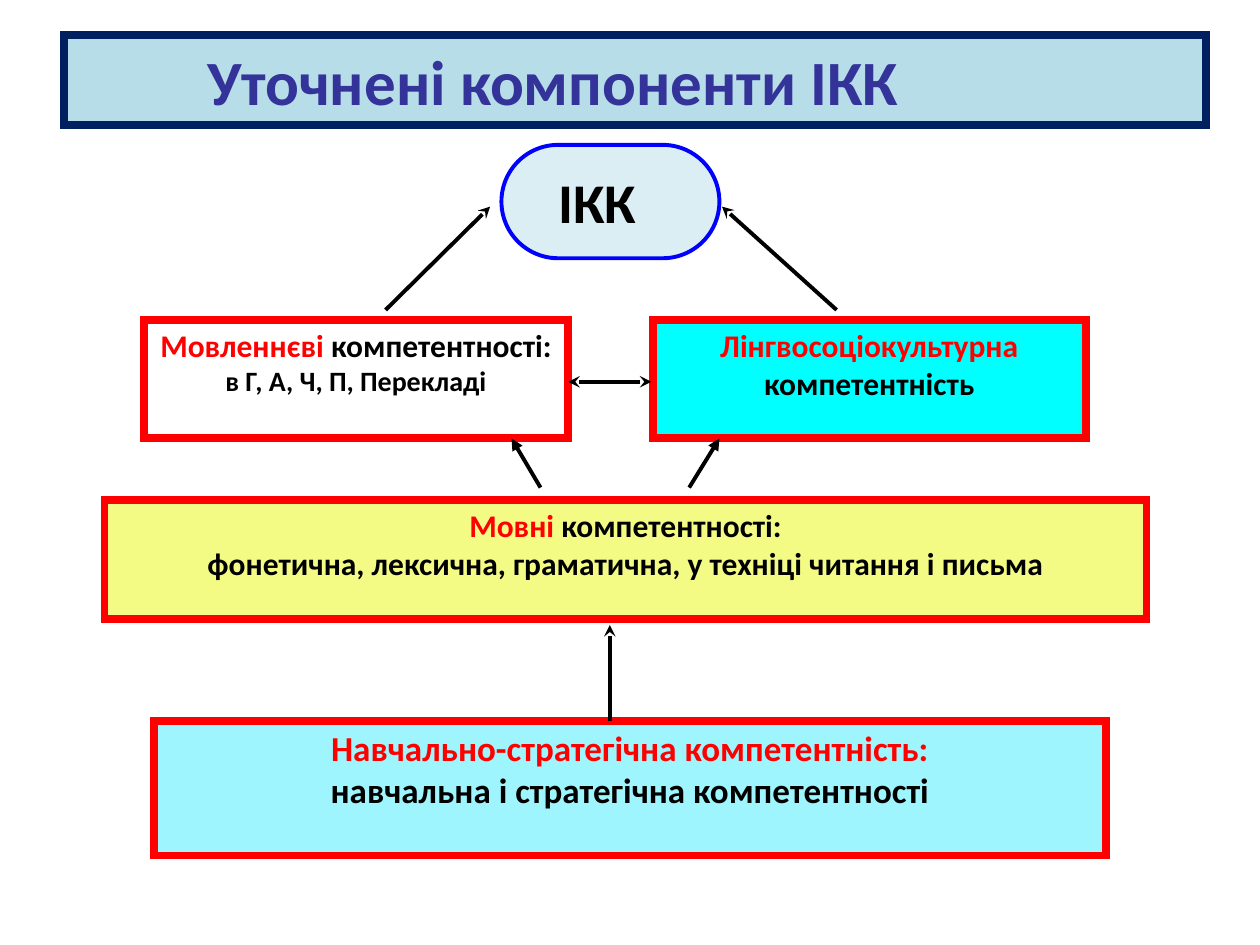
"""Build a slide with the refined components of ІКК as a diagram."""
from pptx import Presentation
from pptx.dml.color import RGBColor
from pptx.enum.shapes import MSO_CONNECTOR, MSO_SHAPE
from pptx.enum.text import MSO_ANCHOR, MSO_AUTO_SIZE, PP_ALIGN
from pptx.oxml.ns import qn
from pptx.util import Inches, Pt
from lxml.etree import SubElement

COLORS = {
    "title_fill": "B7DEE8", "title_line": "002060", "title_text": "333399",
    "goal_fill": "DBEEF4", "blue": "0000FF", "red": "FF0000",
    "black": "000000", "white": "FFFFFF", "cyan": "00FFFF",
    "yellow": "F3FB85", "pale_cyan": "9EF5FE",
}


def style_box(s, fill, line, width):
    s.fill.solid()
    s.fill.fore_color.rgb = RGBColor.from_string(COLORS[fill])
    s.line.color.rgb = RGBColor.from_string(COLORS[line])
    s.line.width = Pt(width)
    SubElement(s.line._get_or_add_ln(), qn("a:miter"), lim="800000")


def add_run(p, text, size, color):
    r = p.add_run()
    r.text = text
    r.font.name = "Calibri"
    r.font.size = Pt(size)
    r.font.bold = True
    r.font.color.rgb = RGBColor.from_string(COLORS[color])


prs = Presentation()
prs.slide_width, prs.slide_height = Inches(10), Inches(7.5)
slide = prs.slides.add_slide(prs.slide_layouts[5])

title = slide.shapes.title
title.left, title.top = Inches(0.51), Inches(0.28)
title.width, title.height = Inches(9.06), Inches(0.71)
style_box(title, "title_fill", "title_line", 4.5)
tf = title.text_frame
tf.auto_size = MSO_AUTO_SIZE.NONE
tf.vertical_anchor = MSO_ANCHOR.MIDDLE
tf.margin_left = Inches(1.14)
p = tf.paragraphs[0]
p.alignment = PP_ALIGN.LEFT
add_run(p, "Уточнені компоненти ІКК", 36, "title_text")

goal = slide.shapes.add_shape(
    MSO_SHAPE.ROUNDED_RECTANGLE, Inches(3.98), Inches(1.15), Inches(1.73), Inches(0.9))
goal.adjustments[0] = 0.5
goal.shadow.inherit = False
style_box(goal, "goal_fill", "blue", 2.25)
tf = goal.text_frame
tf.vertical_anchor = MSO_ANCHOR.TOP
tf.margin_left = Inches(0.32)
p = tf.paragraphs[0]
p.alignment = PP_ALIGN.LEFT
add_run(p, "ІКК", 32, "black")

boxes = [
    (1.14, 2.54, 3.37, 0.94, "white",
     [[("Мовленнєві", 18, "red"), (" компетентності:", 18, "black")],
      [("в Г, А, Ч, П, Перекладі", 16, "black")]]),
    (5.18, 2.54, 3.44, 0.94, "cyan",
     [[("Лінгвосоціокультурна", 18, "red"), (" компетентність", 18, "black")]]),
    (0.83, 3.97, 8.27, 0.94, "yellow",
     [[("Мовні ", 18, "red"), ("компетентності:", 18, "black")],
      [("фонетична, лексична, граматична, у техніці читання і письма", 18, "black")]]),
    (1.22, 5.72, 7.56, 1.07, "pale_cyan",
     [[("Навчально-стратегічна компетентність:", 20, "red")],
      [("навчальна і стратегічна компетентності", 20, "black")]]),
]
for left, top, width, height, fill, paragraphs in boxes:
    s = slide.shapes.add_shape(
        MSO_SHAPE.RECTANGLE, Inches(left), Inches(top), Inches(width), Inches(height))
    s.shadow.inherit = False
    style_box(s, fill, "red", 4.5)
    tf = s.text_frame
    tf.word_wrap = True
    tf.vertical_anchor = MSO_ANCHOR.TOP
    for i, runs in enumerate(paragraphs):
        p = tf.add_paragraph() if i else tf.paragraphs[0]
        p.alignment = PP_ALIGN.CENTER
        for text, size, color in runs:
            add_run(p, text, size, color)

arrows = [
    (5.17, 3.03, 4.51, 3.03, "stealth", ("headEnd", "tailEnd")),
    (3.06, 2.46, 3.89, 1.64, "stealth", ("tailEnd",)),
    (6.64, 2.46, 5.73, 1.64, "stealth", ("tailEnd",)),
    (4.84, 5.72, 4.84, 4.96, "stealth", ("tailEnd",)),
    (5.47, 3.87, 5.71, 3.48, "triangle", ("tailEnd",)),
    (4.29, 3.87, 4.06, 3.48, "triangle", ("tailEnd",)),
]
for x1, y1, x2, y2, kind, ends in arrows:
    s = slide.shapes.add_connector(
        MSO_CONNECTOR.STRAIGHT, Inches(x1), Inches(y1), Inches(x2), Inches(y2))
    s.line.color.rgb = RGBColor.from_string(COLORS["black"])
    s.line.width = Pt(2.25)
    for end in ends:
        SubElement(s.line._get_or_add_ln(), qn(f"a:{end}"), type=kind)
    SubElement(s._element.spPr, qn("a:effectLst"))

prs.save("out.pptx")
